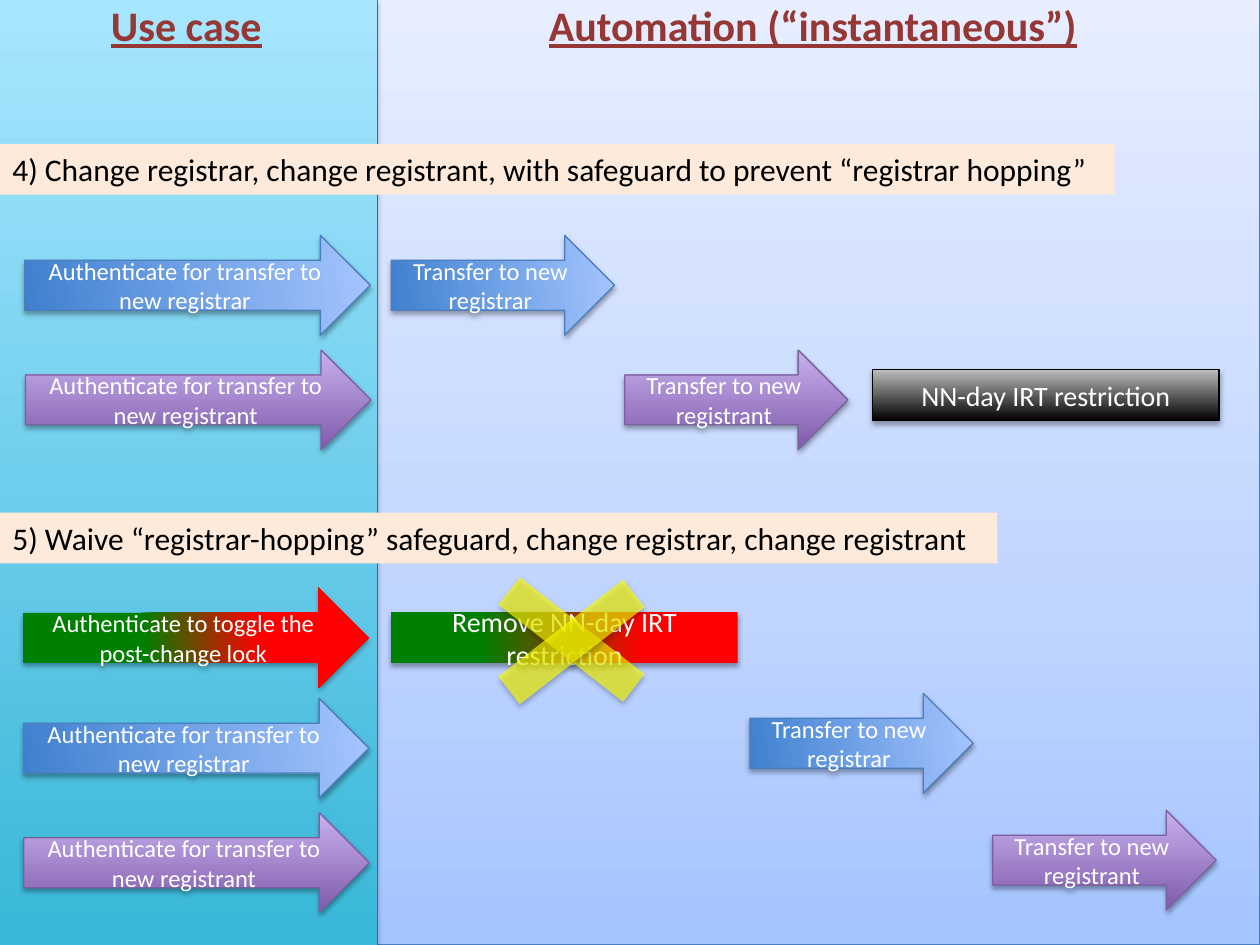
from lxml import etree
from pptx import Presentation
from pptx import util as u
from pptx.dml.color import RGBColor
from pptx.enum import shapes, text
from pptx.oxml.ns import qn

COLORS = {
    "heading": "953735", "label": "FDEADA", "black": "000000", "white": "FFFFFF",
    "blue_line": "4B7EBC", "purple_line": "7D60A0", "cross": "FFFF00",
}
# Gradient stops (percent, colour), clockwise angle, outline colour
LOOKS = {
    "automation": ([(0, "A4C4FF"), (35, "BFD4FF"), (100, "E6EEFF")], 270, "blue_line"),
    "use_case": ([(0, "39B7D8"), (100, "A7E6FF")], 270, None),
    "registrar": ([(0, "3F80CE"), (99, "A4C4FF")], 354, "blue_line"),
    "registrant": ([(0, "7F5BAB"), (100, "C8B0ED")], 270, "purple_line"),
    "restriction": ([(0, "000000"), (100, "BDBDBD")], 270, "black"),
    "toggle": ([(35, "008000"), (68, "FF0000")], 354, None),
    "removal": ([(27, "FF0000"), (74, "008000")], 180, None),
}
ARROW_HEIGHT = 57
USE_CASE_WIDTH, TRANSFER_WIDTH = 197.4, 127.6


def rgb(name):
    return RGBColor.from_string(COLORS[name])


def add_color(parent, value, opacity=None):
    color = etree.SubElement(parent, qn("a:srgbClr"), val=value)
    if opacity is not None:
        etree.SubElement(color, qn("a:alpha"), val=str(opacity * 1000))


def add_shadow(effects, opacity, distance):
    shadow = etree.SubElement(
        effects, qn("a:outerShdw"), blurRad=str(u.Pt(3.1)), dist=str(u.Pt(distance)),
        dir="5400000", rotWithShape="0")
    add_color(shadow, COLORS["black"], opacity)


def write(shape, words, size=14, color="white", bold=False, underline=False,
          align=text.PP_ALIGN.CENTER, anchor=text.MSO_ANCHOR.MIDDLE, grow=False):
    frame = shape.text_frame
    frame.word_wrap = True
    frame.vertical_anchor = anchor
    if grow:
        frame.auto_size = text.MSO_AUTO_SIZE.SHAPE_TO_FIT_TEXT
    paragraph = frame.paragraphs[0]
    paragraph.alignment = align
    run = paragraph.add_run()
    run.text = words
    font = run.font
    font.name, font.size, font.color.rgb = "Calibri", u.Pt(size), rgb(color)
    font.bold, font.underline = bold, underline


class SlideBuilder:
    """Holds the current slide and draws each kind of element on it."""

    def __init__(self, slide):
        self.slide = slide

    def block(self, kind, look, left, top, width, height, words=None, size=14):
        """Draw a gradient shape with a soft shadow and optional text."""
        shape = self.slide.shapes.add_shape(
            kind, u.Pt(left), u.Pt(top), u.Pt(width), u.Pt(height))
        stops, angle, outline = LOOKS[look]
        shape.fill.gradient()
        shape.fill.gradient_angle = 360 - angle
        stop_list = next(shape.element.iter(qn("a:gsLst")))
        for old_stop in list(stop_list):
            stop_list.remove(old_stop)
        for position, color in stops:
            add_color(etree.SubElement(stop_list, qn("a:gs"), pos=str(position * 1000)), color)
        if outline:
            shape.line.color.rgb = rgb(outline)
            shape.line.width = u.Pt(0.75)
        else:
            shape.line.fill.background()
        shape.shadow.inherit = False
        add_shadow(next(shape.element.iter(qn("a:effectLst"))), 35, 1.8)
        if words:
            write(shape, words, size=size)

    def panel(self, look, left, top, width, height, words=None):
        self.block(shapes.MSO_SHAPE.RECTANGLE, look, left, top, width, height, words, size=16)

    def arrow(self, look, left, top, width, words):
        self.block(shapes.MSO_SHAPE.RIGHT_ARROW, look, left, top, width, ARROW_HEIGHT, words)

    def heading(self, words, left, width):
        box = self.slide.shapes.add_textbox(u.Pt(left), u.Pt(-3.6), u.Pt(width), u.Pt(36))
        write(box, words, size=24, color="heading", bold=True, underline=True,
              anchor=text.MSO_ANCHOR.TOP, grow=True)

    def section(self, words, top, width):
        bar = self.slide.shapes.add_shape(
            shapes.MSO_SHAPE.RECTANGLE, 0, u.Pt(top), u.Pt(width), u.Pt(29))
        bar.fill.solid()
        bar.fill.fore_color.rgb = rgb("label")
        bar.line.fill.background()
        bar.shadow.inherit = False
        write(bar, words, size=18, color="black", align=text.PP_ALIGN.LEFT,
              anchor=text.MSO_ANCHOR.TOP, grow=True)

    def cross(self, left, top, width, height):
        group = self.slide.shapes.add_group_shape()
        right = left + width
        for start, end, y in ((left, right, top), (right, left, top + 1.4)):
            bar = group.shapes.add_connector(
                shapes.MSO_CONNECTOR.STRAIGHT,
                u.Pt(start), u.Pt(y), u.Pt(end), u.Pt(y + height))
            bar.line.width = u.Pt(20)
            bar.line.color.rgb = rgb("cross")
            color = next(bar.element.iter(qn("a:srgbClr")))
            etree.SubElement(color, qn("a:alpha"), val="63000")
            effects = etree.SubElement(bar.element.spPr, qn("a:effectLst"))
            add_shadow(effects, 38, 1.6)


def main():
    presentation = Presentation()
    presentation.slide_width, presentation.slide_height = u.Pt(720), u.Pt(540)
    builder = SlideBuilder(presentation.slides.add_slide(presentation.slide_layouts[6]))

    builder.panel("automation", 215.5, -0.5, 504.5, 540.5)
    builder.panel("use_case", 0, 0, 215.5, 540)
    builder.heading("Use case", -36, 285)
    builder.heading("Automation (“instantaneous”)", 264, 401)

    builder.section("4) Change registrar, change registrant, with safeguard to prevent "
                    "“registrar hopping”", 82.2, 637)
    builder.section("5) Waive “registrar-hopping” safeguard, change registrar, "
                    "change registrant", 293, 570)

    for look, left, top in (("registrar", 14.2, 134.5), ("registrant", 14.6, 200),
                            ("registrar", 13.5, 399), ("registrant", 13.6, 464.5)):
        builder.arrow(look, left, top, USE_CASE_WIDTH, f"Authenticate for transfer to new {look}")
    builder.arrow("toggle", 13.2, 336, USE_CASE_WIDTH,
                  "Authenticate to toggle the post-change lock")

    for look, left, top in (("registrar", 223.6, 134.5), ("registrant", 357, 200),
                            ("registrar", 428.5, 396.2), ("registrant", 567.3, 463)):
        builder.arrow(look, left, top, TRANSFER_WIDTH, f"Transfer to new {look}")

    builder.panel("restriction", 498.6, 211.2, 198, 29, "NN-day IRT restriction")
    builder.panel("removal", 223.6, 350, 198, 29, "Remove NN-day IRT restriction")
    builder.cross(290.9, 337.7, 71.3, 55.4)

    presentation.save("out.pptx")


if __name__ == "__main__":
    main()
